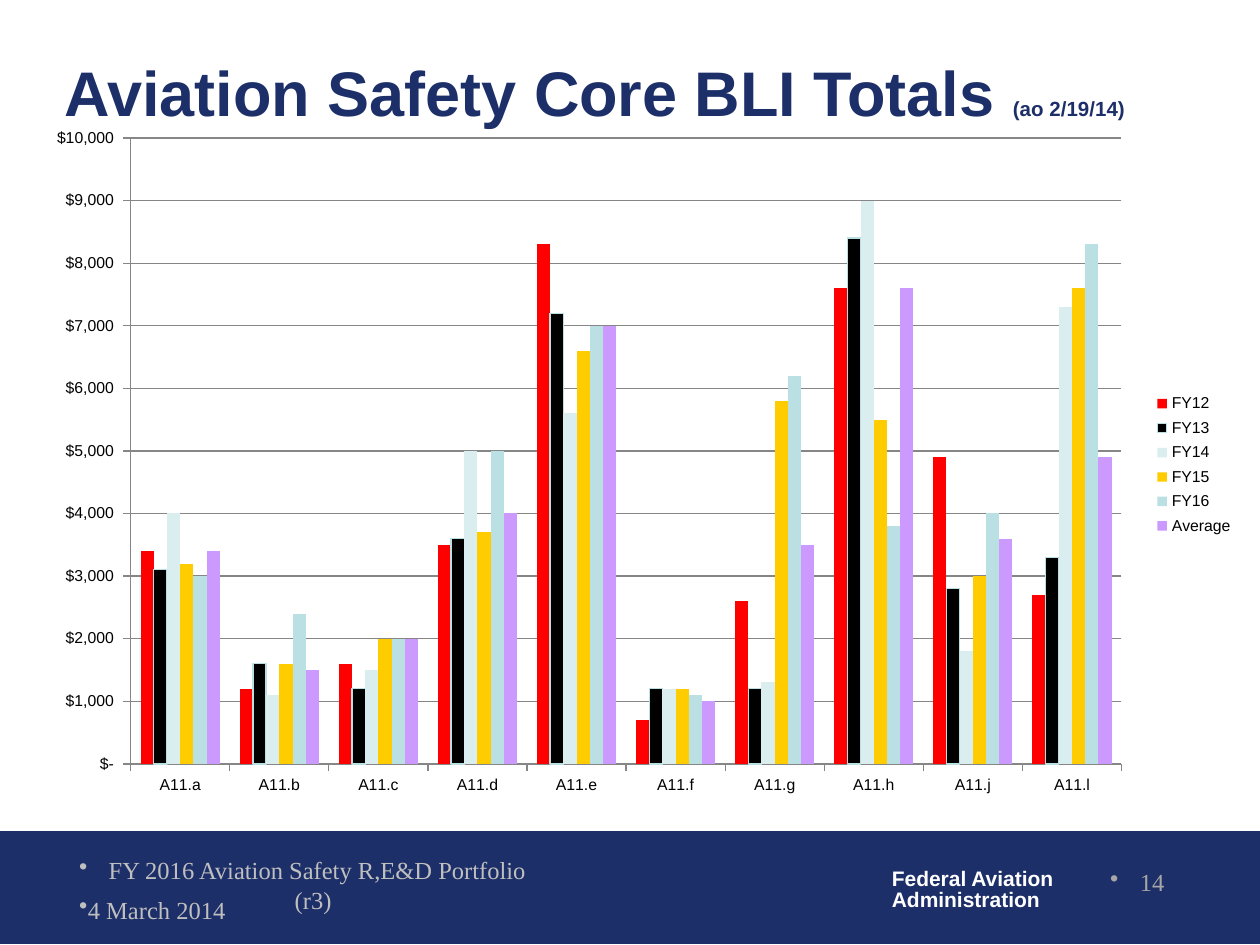
"""Build the Aviation Safety Core BLI Totals slide with its column chart."""
from lxml.etree import SubElement
from pptx import Presentation
from pptx.chart.data import CategoryChartData
from pptx.dml.color import RGBColor
from pptx.enum.chart import XL_CHART_TYPE, XL_LEGEND_POSITION, XL_TICK_MARK
from pptx.enum.shapes import MSO_SHAPE
from pptx.enum.text import MSO_ANCHOR, MSO_AUTO_SIZE, PP_ALIGN
from pptx.oxml import parse_xml
from pptx.oxml.ns import nsdecls, qn
from pptx.util import Inches, Pt

NAVY = RGBColor(0x1D, 0x2F, 0x68)
WHITE = RGBColor(0xFF, 0xFF, 0xFF)
BLACK = RGBColor(0x00, 0x00, 0x00)
SILVER = RGBColor(0xBF, 0xBF, 0xBF)
GRAY = RGBColor(0xA6, 0xA6, 0xA6)
RULE = RGBColor(0x86, 0x86, 0x86)
RED = RGBColor(0xFF, 0x00, 0x00)
MIST = RGBColor(0xDA, 0xED, 0xEF)
GOLD = RGBColor(0xFF, 0xCC, 0x00)
AQUA = RGBColor(0xBB, 0xE0, 0xE3)
LILAC = RGBColor(0xCC, 0x99, 0xFF)


def style(font, name, size, color, bold=False):
    """Set a font from a dict of format values."""
    font.color.rgb = color
    for key, val in {"name": name, "size": Pt(size), "bold": bold}.items():
        setattr(font, key, val)


def place(node, x, y, w, h, inner=False):
    """Give a chart part a manual layout in shares of the chart."""
    target = '<c:layoutTarget val="inner"/>' if inner else ""
    sizes = "".join(f'<c:{k} val="{v}"/>' for k, v in zip("xywh", (x, y, w, h)))
    layout = parse_xml(
        f'<c:layout {nsdecls("c")}><c:manualLayout>{target}<c:xMode val="edge"/>'
        f'<c:yMode val="edge"/>{sizes}</c:manualLayout></c:layout>')
    for old in node.findall(qn("c:layout")):
        node.remove(old)
    node.insert(0 if inner else 1, layout)


deck = Presentation()
deck.slide_width, deck.slide_height = Inches(10), Inches(7.5)
slide = deck.slides.add_slide(deck.slide_layouts[5])
shapes = slide.shapes

band = shapes.add_shape(MSO_SHAPE.RECTANGLE, 0, Inches(6.6), deck.slide_width, Inches(0.89))
band.shadow.inherit = False
band.fill.solid()
band.fill.fore_color.rgb = NAVY
band.line.color.rgb = NAVY
band.line.width = Pt(0.75)

agency = shapes.add_textbox(*map(Inches, (6.98, 6.85, 1.5, 0.44))).text_frame
agency.word_wrap = False
agency.text = "Federal Aviation\nAdministration"
for para in agency.paragraphs:
    para.line_spacing = 0.85
    style(para.font, "Arial", 12, WHITE, True)

title = shapes.title
spots = dict(zip(("left", "top", "width", "height"), (0.41, 0.41, 9.33, 0.63)))
for key, val in spots.items():
    setattr(title, key, Inches(val))
frame = title.text_frame
for key, val in {"word_wrap": False, "auto_size": MSO_AUTO_SIZE.NONE,
                 "vertical_anchor": MSO_ANCHOR.MIDDLE}.items():
    setattr(frame, key, val)
para = frame.paragraphs[0]
para.alignment = PP_ALIGN.LEFT
for text, size in (("Aviation Safety Core BLI Totals ", 36), ("(ao 2/19/14)", 11.7)):
    run = para.add_run()
    run.text = text
    style(run.font, "Arial", size, NAVY, True)

notes = (
    ("14", (7.26, 6.83, 2.08, 0.5), PP_ALIGN.RIGHT, GRAY),
    ("4 March 2014", (0.53, 7.05, 1.46, 0.29), PP_ALIGN.LEFT, SILVER),
    ("FY 2016 Aviation Safety R,E&D Portfolio (r3)", (0.53, 6.74, 3.91, 0.34),
     PP_ALIGN.CENTER, SILVER),
)
for text, box, align, color in notes:
    frame = shapes.add_textbox(*map(Inches, box)).text_frame
    frame.word_wrap = True
    para = frame.paragraphs[0]
    para.text = text
    para.alignment = align
    SubElement(para._p.get_or_add_pPr(), qn("a:buChar"), char="•")
    style(para.runs[0].font, "Times New Roman", 14, color)

data = CategoryChartData()
data.categories = [f"A11.{key}" for key in "abcdefghjl"]
rows = (
    ("FY12", RED, (3400, 1200, 1600, 3500, 8300, 700, 2600, 7600, 4900, 2700)),
    ("FY13", BLACK, (3100, 1600, 1200, 3600, 7200, 1200, 1200, 8400, 2800, 3300)),
    ("FY14", MIST, (4000, 1100, 1500, 5000, 5600, 1200, 1300, 9000, 1800, 7300)),
    ("FY15", GOLD, (3200, 1600, 2000, 3700, 6600, 1200, 5800, 5500, 3000, 7600)),
    ("FY16", AQUA, (3000, 2400, 2000, 5000, 7000, 1100, 6200, 3800, 4000, 8300)),
    ("Average", LILAC, (3400, 1500, 2000, 4000, 7000, 1000, 3500, 7600, 3600, 4900)),
)
for name, _, vals in rows:
    data.add_series(name, vals)
chart = shapes.add_chart(XL_CHART_TYPE.COLUMN_CLUSTERED,
                         *map(Inches, (0.27, 0.93, 9.59, 5.52)), data).chart
style(chart.font, "Arial", 18, BLACK)
chart.has_title = False
chart.has_legend = True
chart.legend.position = XL_LEGEND_POSITION.RIGHT
chart.legend.include_in_layout = False
style(chart.legend.font, "Arial", 9, BLACK)

plot = chart.plots[0]
for key, val in {"gap_width": 150, "overlap": 0, "vary_by_categories": False}.items():
    setattr(plot, key, val)
for bars, (_, color, _) in zip(plot.series, rows):
    bars.format.fill.solid()
    bars.format.fill.fore_color.rgb = color
    bars.invert_if_negative = False
edge = plot.series[1].format.line
edge.color.rgb = AQUA
edge.width = Pt(0.75)

cost = chart.value_axis
for key, val in {"minimum_scale": 0, "maximum_scale": 10000, "major_unit": 1000,
                 "has_major_gridlines": True}.items():
    setattr(cost, key, val)
cost.tick_labels.number_format = '_("$"* #,##0_);_("$"* \\(#,##0\\);_("$"* "-"_);_(@_)'
cost.tick_labels.number_format_is_linked = False
for axis in (chart.category_axis, cost):
    axis.major_tick_mark = XL_TICK_MARK.OUTSIDE
    style(axis.tick_labels.font, "Arial", 9, BLACK)
for part in (chart.category_axis, cost, cost.major_gridlines):
    part.format.line.color.rgb = RULE
    part.format.line.width = Pt(0.75)

area = chart._chartSpace.chart.plotArea
place(area, 0.08, 0.03, 0.82, 0.9, True)
place(chart.legend._element, 0.92, 0.39, 0.08, 0.22)

deck.save("out.pptx")
